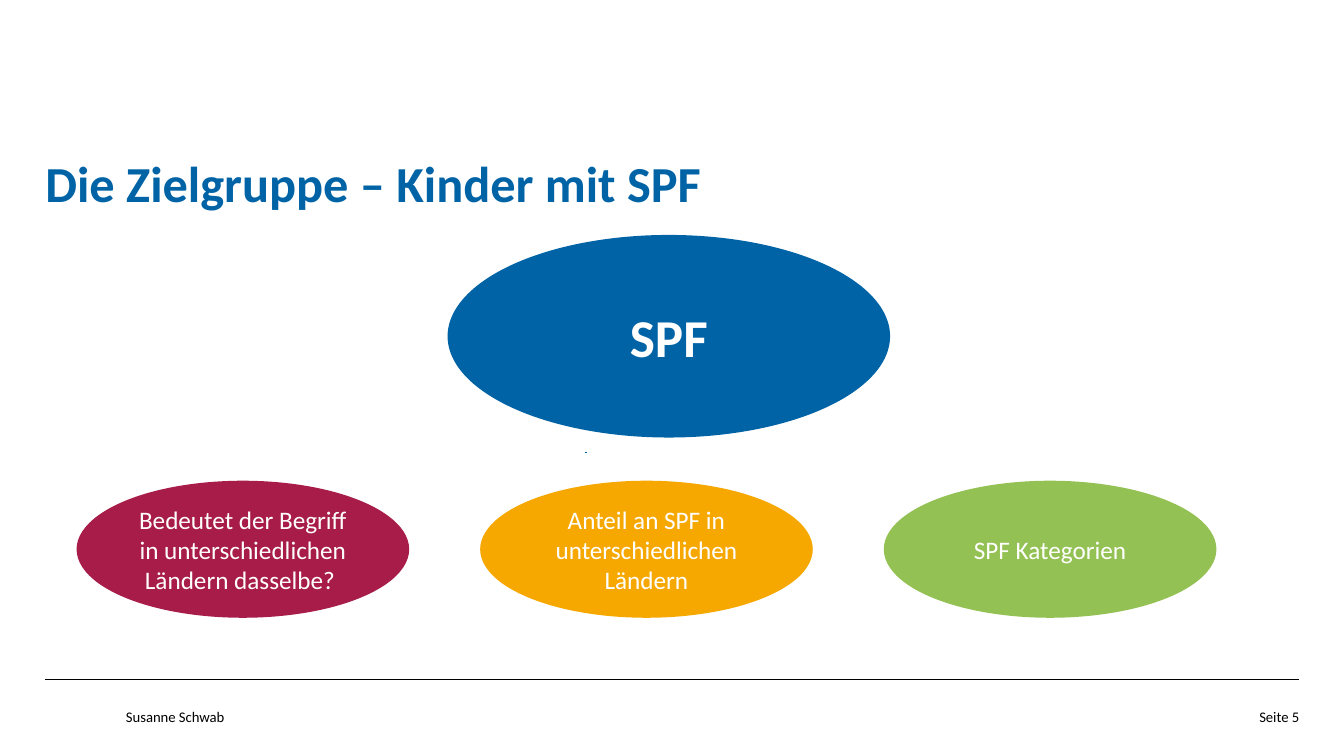
from dataclasses import dataclass

from lxml.etree import SubElement
from pptx import Presentation
from pptx.dml.color import RGBColor
from pptx.enum.shapes import MSO_CONNECTOR, MSO_SHAPE
from pptx.enum.text import MSO_ANCHOR, MSO_AUTO_SIZE, PP_ALIGN
from pptx.oxml.ns import qn
from pptx.util import Pt

FONT = "Calibri"
BLUE, BLACK, WHITE = "0063A6", "000000", "FFFFFF"
LEFT, RIGHT = 32.4, 928.1
FOOTER_TOP, FOOTER_HEIGHT = 505.4, 28.8
TOPIC_LEFT, TOPIC_STEP = 54.7, 288.3


@dataclass
class Ellipse:
    text: str
    left: float
    top: float
    width: float
    height: float
    color: str
    size: float = 18
    bold: bool = False


def rgb(color: str) -> RGBColor:
    return RGBColor.from_string(color)


def write(shape, text: str, *, size: float, color: str, bold: bool = False,
          align=PP_ALIGN.LEFT, anchor=MSO_ANCHOR.TOP, inset: bool = False,
          line_spacing: float = 1.0) -> None:
    frame = shape.text_frame
    frame.word_wrap = True
    frame.auto_size = MSO_AUTO_SIZE.NONE
    frame.vertical_anchor = anchor
    if not inset:
        frame.margin_left = frame.margin_right = Pt(0)
        frame.margin_top = frame.margin_bottom = Pt(0)
    para = frame.paragraphs[0]
    para.alignment = align
    para.line_spacing = line_spacing
    span = para.add_run()
    span.text = text
    span.font.name = FONT
    span.font.size = Pt(size)
    span.font.bold = bold
    span.font.color.rgb = rgb(color)


def draw_ellipse(page, item: Ellipse) -> None:
    shape = page.shapes.add_shape(MSO_SHAPE.OVAL, Pt(item.left), Pt(item.top),
                                  Pt(item.width), Pt(item.height))
    shape.shadow.inherit = False
    shape.fill.solid()
    shape.fill.fore_color.rgb = rgb(item.color)
    shape.line.fill.background()
    write(shape, item.text, size=item.size, color=WHITE, bold=item.bold,
          align=PP_ALIGN.CENTER, anchor=MSO_ANCHOR.MIDDLE, inset=True)


def draw_line(page, start: float, end: float, height: float, color: str) -> None:
    line = page.shapes.add_connector(MSO_CONNECTOR.STRAIGHT, Pt(start), Pt(height),
                                     Pt(end), Pt(height))
    line.line.color.rgb = rgb(color)
    line.line.width = Pt(0.75)
    SubElement(line._element.spPr, qn("a:effectLst"))


def draw_footer(page, text: str, left: float, width: float, align) -> None:
    box = page.shapes.add_textbox(Pt(left), Pt(FOOTER_TOP), Pt(width), Pt(FOOTER_HEIGHT))
    write(box, text, size=10.5, color=BLACK, align=align)


def main() -> None:
    deck = Presentation()
    deck.slide_width, deck.slide_height = Pt(960), Pt(540)
    page = deck.slides.add_slide(deck.slide_layouts[5])

    # Title
    title = page.shapes.title
    title.left, title.top = Pt(LEFT), Pt(87.8)
    title.width, title.height = Pt(671.8), Pt(64.8)
    write(title, "Die Zielgruppe – Kinder mit SPF", size=36, color=BLUE, bold=True,
          anchor=MSO_ANCHOR.BOTTOM, line_spacing=0.9)

    # Footer
    draw_line(page, LEFT, RIGHT, 485.3, BLACK)
    draw_footer(page, "Susanne Schwab", 90, 614.2, PP_ALIGN.LEFT)
    draw_footer(page, "Seite 5", RIGHT - 65.5, 65.5, PP_ALIGN.RIGHT)

    # Main subject and the three topics below it
    draw_ellipse(page, Ellipse("SPF", 319.7, 167.8, 316.1, 144.7, BLUE, 38, True))
    topics = [
        ("Bedeutet der Begriff in unterschiedlichen Ländern dasselbe? ", "A71C49"),
        ("Anteil an SPF in unterschiedlichen Ländern", "F6A800"),
        ("SPF Kategorien", "94C154"),
    ]
    for index, (text, color) in enumerate(topics):
        left = TOPIC_LEFT + index * TOPIC_STEP
        draw_ellipse(page, Ellipse(text, left, 343.4, 237.6, 97.9, color))

    # Short dash under the main subject
    draw_line(page, 419, 417.6, 323.3, BLUE)

    deck.save("out.pptx")


if __name__ == "__main__":
    main()
